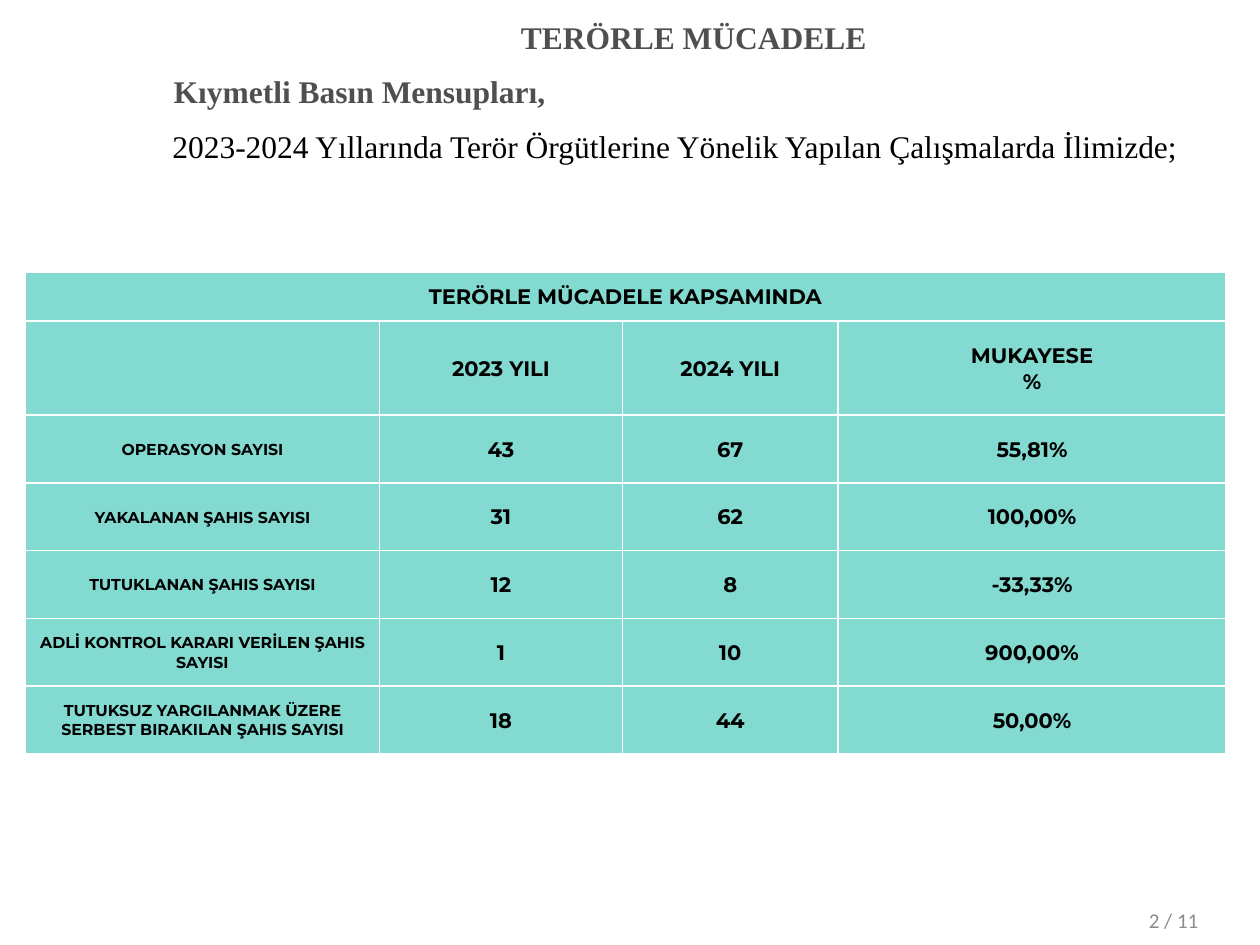
from pptx import Presentation
from pptx.dml.color import RGBColor
from pptx.enum.text import MSO_ANCHOR, PP_ALIGN
from pptx.util import Pt

CENTER, JUSTIFY = PP_ALIGN.CENTER, PP_ALIGN.JUSTIFY
MIDDLE = MSO_ANCHOR.MIDDLE
TURQUOISE = RGBColor(0x82, 0xDA, 0xD0)
BLACK = RGBColor(0, 0, 0)
DARK_GRAY = RGBColor(0x4F, 0x4F, 0x4F)
LIGHT_GRAY = RGBColor(0x8C, 0x8C, 0x8C)

INTRO = [
    ("TERÖRLE MÜCADELE", CENTER, DARK_GRAY, True, 32.4, 1.07, 8),
    ("Kıymetli Basın Mensupları,", JUSTIFY, DARK_GRAY, True, 32.4, 1.07, 8),
    ("2023-2024 Yıllarında Terör Örgütlerine Yönelik Yapılan Çalışmalarda İlimizde;",
     JUSTIFY, BLACK, False, 31.6, 1.08, 11.4),
]
PAGE_NUMBER = "2 / 11"
STATISTICS = [
    ("TERÖRLE MÜCADELE KAPSAMINDA", "", "", ""),
    ("", "2023 YILI", "2024 YILI", "MUKAYESE\v%"),
    ("OPERASYON SAYISI", "43", "67", "55,81%"),
    ("YAKALANAN ŞAHIS SAYISI", "31", "62", "100,00%"),
    ("TUTUKLANAN ŞAHIS SAYISI", "12", "8", "-33,33%"),
    ("ADLİ KONTROL KARARI VERİLEN ŞAHIS SAYISI", "1", "10", "900,00%"),
    ("TUTUKSUZ YARGILANMAK ÜZERE SERBEST BIRAKILAN ŞAHIS SAYISI", "18", "44", "50,00%"),
]
COLUMN_WIDTHS = [202.5, 138.7, 123.4, 221.6]
ROW_HEIGHTS = [27.8, 53.8] + [38.7] * 5


def set_font(paragraph, name, size, color, bold=False):
    font = paragraph.font
    font.name, font.size, font.bold = name, Pt(size), bold
    font.color.rgb = color


def add_text_frame(slide, left, top, width, height):
    frame = slide.shapes.add_textbox(Pt(left), Pt(top), Pt(width), Pt(height)).text_frame
    frame.word_wrap = True
    return frame


def add_intro(slide):
    frame = add_text_frame(slide, 59.8, 5, 640.8, 93.6)
    for i, (text, align, color, bold, indent, spacing, after) in enumerate(INTRO):
        paragraph = frame.add_paragraph() if i else frame.paragraphs[0]
        paragraph.text = text
        paragraph.alignment = align
        paragraph.line_spacing = spacing
        paragraph.space_after = Pt(after)
        paragraph._p.get_or_add_pPr().set("indent", str(Pt(indent)))
        set_font(paragraph, "Times New Roman", 18, color, bold)


def add_statistics(slide):
    table = slide.shapes.add_table(
        len(ROW_HEIGHTS), len(COLUMN_WIDTHS), Pt(14.4), Pt(155.7),
        Pt(sum(COLUMN_WIDTHS)), Pt(sum(ROW_HEIGHTS))).table
    table.first_row = table.horz_banding = False
    for column, width in zip(table.columns, COLUMN_WIDTHS):
        column.width = Pt(width)
    for row, height in zip(table.rows, ROW_HEIGHTS):
        row.height = Pt(height)
    table.cell(0, 0).merge(table.cell(0, len(COLUMN_WIDTHS) - 1))
    for r, texts in enumerate(STATISTICS):
        for c, text in enumerate(texts):
            cell = table.cell(r, c)
            cell.fill.solid()
            cell.fill.fore_color.rgb = TURQUOISE
            cell.vertical_anchor = MIDDLE
            cell.margin_left = cell.margin_right = cell.margin_top = Pt(0.7)
            cell.margin_bottom = 0
            paragraph = cell.text_frame.paragraphs[0]
            paragraph.text = text
            paragraph.alignment = CENTER
            is_row_label = c == 0 and r > 1
            set_font(paragraph, "Montserrat", 9 if is_row_label else 12, BLACK, True)


def add_page_number(slide):
    paragraph = add_text_frame(slide, 649.4, 514.8, 70, 21.6).paragraphs[0]
    paragraph.text = PAGE_NUMBER
    set_font(paragraph, "Calibri", 12, LIGHT_GRAY)


def main():
    presentation = Presentation()
    presentation.slide_width, presentation.slide_height = Pt(720), Pt(540)
    slide = presentation.slides.add_slide(presentation.slide_layouts[6])
    add_page_number(slide)
    add_statistics(slide)
    add_intro(slide)
    presentation.save("out.pptx")


if __name__ == "__main__":
    main()
